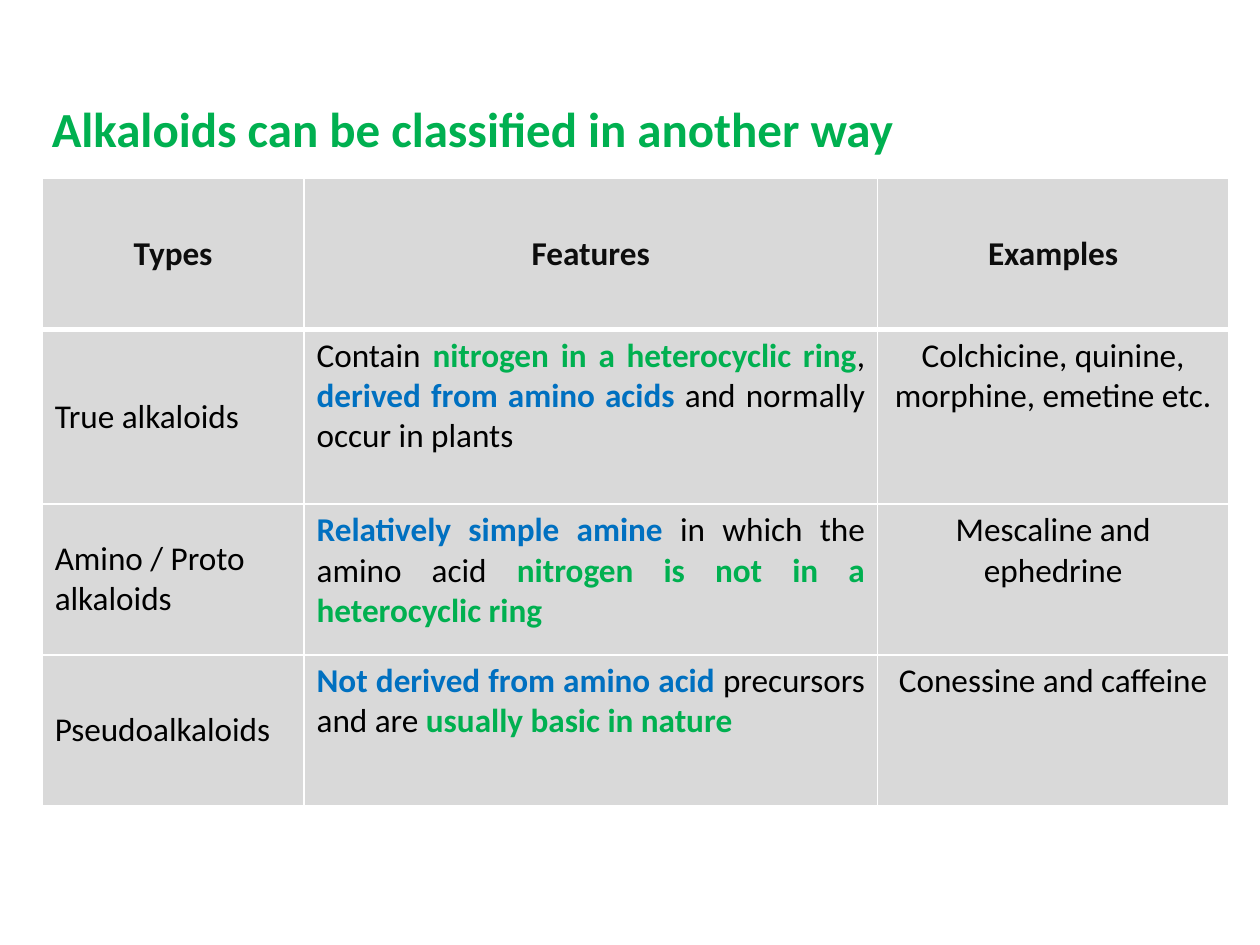
from dataclasses import dataclass

from lxml import etree
from pptx import Presentation
from pptx.dml import color
from pptx.enum import text
from pptx.oxml import ns
from pptx.util import Cm, Pt


@dataclass(frozen=True)
class Theme:
    font: str = "Calibri"
    head: float = 28
    body: float = 19
    ink: str = "000000"
    dark: str = "0D0D0D"
    green: str = "00B050"
    blue: str = "0070C0"
    fill: str = "D9D9D9"
    rule: str = "FFFFFF"


LEFT = text.PP_ALIGN.LEFT
MID = text.PP_ALIGN.CENTER
FULL = text.PP_ALIGN.JUSTIFY


class Deck:
    def __init__(self, theme):
        self.theme = theme
        self.file = Presentation()
        self.file.slide_width, self.file.slide_height = Cm(25.4), Cm(19.05)
        self.slide = self.file.slides.add_slide(self.file.slide_layouts[5])

    def add_runs(self, frame, runs, size, align):
        para = frame.paragraphs[0]
        para.alignment = align
        for words, tint, bold in runs:
            run = para.add_run()
            run.text = words
            font = run.font
            font.name, font.size, font.bold = self.theme.font, Pt(size), bold
            font.color.rgb = color.RGBColor.from_string(tint)

    def title(self, words, left, top, width, height):
        box = self.slide.shapes.title
        box.left, box.top, box.width, box.height = map(Cm, (left, top, width, height))
        frame = box.text_frame
        frame.word_wrap = True
        frame.auto_size = text.MSO_AUTO_SIZE.NONE
        frame.vertical_anchor = text.MSO_ANCHOR.MIDDLE
        self.add_runs(frame, [(words, self.theme.green, True)], self.theme.head, LEFT)

    def border(self, cell, side, width):
        props = cell._tc.get_or_add_tcPr()
        line = etree.SubElement(props, ns.qn(f"a:ln{side}"), w=str(Pt(width)))
        solid = etree.SubElement(line, ns.qn("a:solidFill"))
        etree.SubElement(solid, ns.qn("a:srgbClr"), val=self.theme.rule)

    def cell(self, cell, runs, align, middle, top, bottom):
        cell.vertical_anchor = text.MSO_ANCHOR.MIDDLE if middle else text.MSO_ANCHOR.TOP
        for side, width in zip("LRTB", (1, 1, top, bottom)):
            self.border(cell, side, width)
        cell.fill.solid()
        cell.fill.fore_color.rgb = color.RGBColor.from_string(self.theme.fill)
        self.add_runs(cell.text_frame, runs, self.theme.body, align)

    def table(self, rows, left, top, widths, heights):
        grid = self.slide.shapes.add_table(
            len(rows), len(widths), Cm(left), Cm(top), Cm(sum(widths)), Cm(sum(heights))
        ).table
        for col, width in zip(grid.columns, widths):
            col.width = Cm(width)
        for row, height in zip(grid.rows, heights):
            row.height = Cm(height)
        for r, row in enumerate(rows):
            aligns = (MID, MID, MID) if r == 0 else (LEFT, FULL, MID)
            for c, (runs, align) in enumerate(zip(row, aligns)):
                self.cell(grid.cell(r, c), runs, align, r == 0 or c == 0,
                          3 if r == 1 else 1, 3 if r == 0 else 1)

    def save(self):
        self.file.save("out.pptx")


def main():
    theme = Theme()

    def plain(words):
        return words, theme.ink, False

    def green(words):
        return words, theme.green, True

    def blue(words):
        return words, theme.blue, True

    rows = [
        [[(name, theme.dark, True)] for name in ("Types", "Features", "Examples")],
        [
            [plain("True alkaloids")],
            [plain("Contain "), green("nitrogen in a heterocyclic ring"), plain(", "),
             blue("derived from amino acids "), plain("and normally occur in plants")],
            [plain("Colchicine, quinine, morphine, emetine etc.")],
        ],
        [
            [plain("Amino / Proto alkaloids")],
            [blue("Relatively simple amine "), plain("in which the amino acid "),
             green("nitrogen is not in a heterocyclic ring ")],
            [plain("Mescaline and ephedrine")],
        ],
        [
            [plain("Pseudoalkaloids")],
            [blue("Not derived from amino acid "), plain("precursors and are "),
             green("usually basic in nature")],
            [plain("Conessine and caffeine")],
        ],
    ]

    deck = Deck(theme)
    deck.title("Alkaloids can be classified in another way", 0.79, 1.9, 22.86, 1.35)
    deck.table(rows, 0.85, 3.6, (5.28, 11.56, 7.08), (3.04, 3.52, 3.04, 3.04))
    deck.save()


if __name__ == "__main__":
    main()
